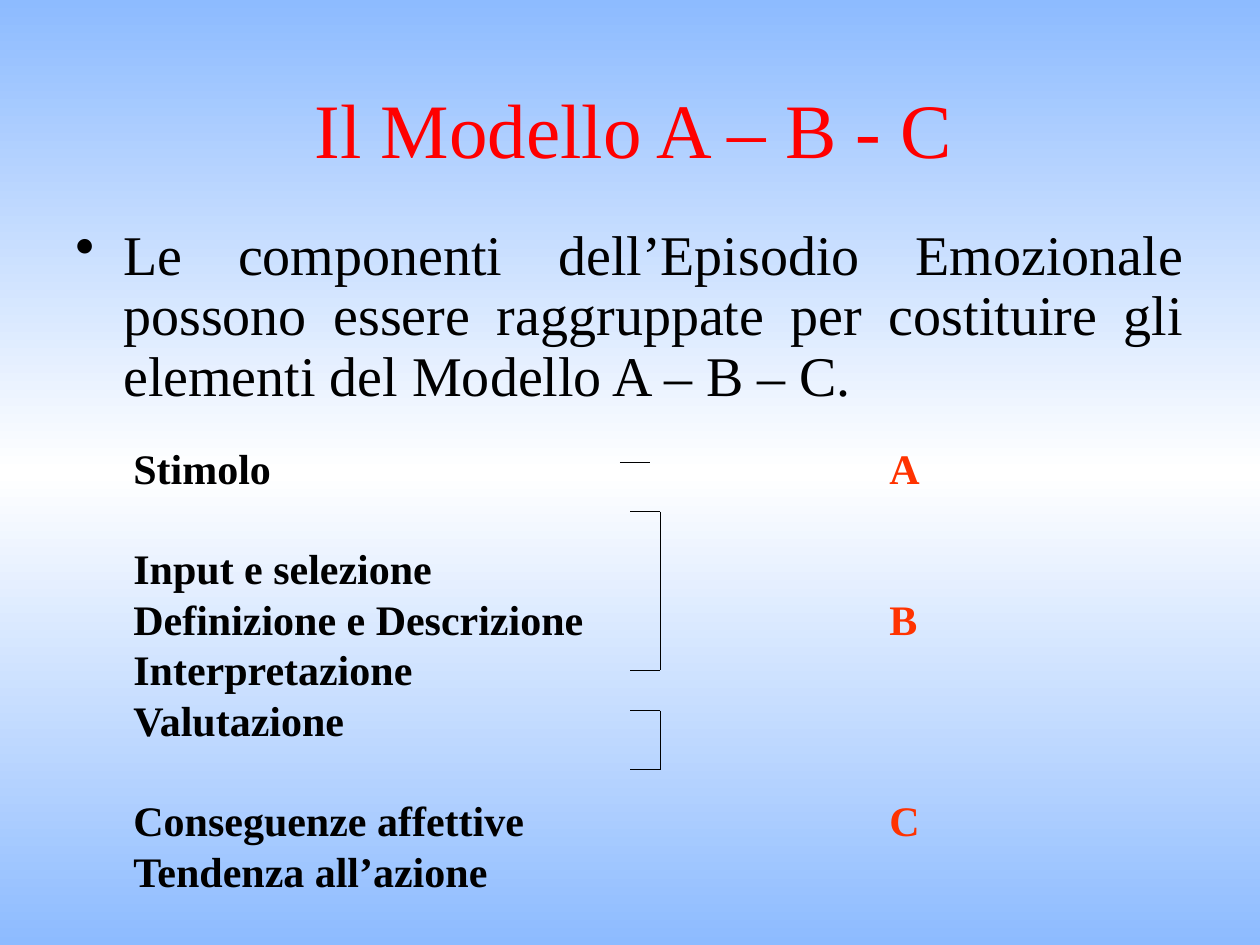
from copy import deepcopy
from lxml import etree
from pptx import Presentation
from pptx import util as u
from pptx.dml.color import RGBColor
from pptx.enum import shapes, text
from pptx.oxml.ns import qn

BLACK, RED, ORANGE = "000000", "FF0000", "FF3300"
LINE_PITCH = 28.8


def write(para, wording, size, color, bold=False):
    """Add one formatted span to a paragraph."""
    span = para.add_run()
    span.text = wording
    look = {"name": "Times New Roman", "size": u.Pt(size), "bold": bold}
    for key, value in look.items():
        setattr(span.font, key, value)
    span.font.color.rgb = RGBColor.from_string(color)


def draw_line(parent, x1, y1, x2, y2):
    line = parent.add_connector(shapes.MSO_CONNECTOR.STRAIGHT,
                                *map(u.Inches, (x1, y1, x2, y2)))
    line.line.width = u.Pt(0.75)
    line.line.color.rgb = RGBColor.from_string(BLACK)
    etree.SubElement(line._element.spPr, qn("a:effectLst"))


deck = Presentation()
deck.slide_width, deck.slide_height = u.Inches(10), u.Inches(7.5)
page = deck.slides.add_slide(deck.slide_layouts[5])

# Background: blue, white in the middle, blue again
fill = page.background.fill
fill.gradient()
fill.gradient_angle = 270
for stop, color in zip(fill.gradient_stops, ("8DBBFF", "FFFFFF")):
    stop.color.rgb = RGBColor.from_string(color)
fill.gradient_stops[1].position = 0.5
stops = next(page.element.iter(qn("a:gsLst")))
last_stop = deepcopy(stops[0])
last_stop.set("pos", "100000")
stops.append(last_stop)

# Title
title = page.shapes.title
place = {"left": 0.78, "top": 0.39, "width": 8.5, "height": 1.25}
for key, value in place.items():
    setattr(title, key, u.Inches(value))
title.text_frame.vertical_anchor = text.MSO_ANCHOR.MIDDLE
para = title.text_frame.paragraphs[0]
para.alignment = text.PP_ALIGN.CENTER
write(para, "Il Modello A – B - C", 44, RED)

# Introduction
box = page.shapes.add_textbox(*map(u.Inches, (0.5, 1.75, 9, 1.69)))
box.text_frame.word_wrap = True
para = box.text_frame.paragraphs[0]
layout = {"alignment": text.PP_ALIGN.JUSTIFY, "line_spacing": 0.9,
          "space_before": u.Pt(6.4)}
for key, value in layout.items():
    setattr(para, key, value)
write(para, "Le componenti dell’Episodio Emozionale possono essere raggruppate "
      "per costituire gli elementi del Modello A – B – C.", 32, BLACK)
props = para._p.get_or_add_pPr()
props.set("marL", str(u.Inches(0.38)))
props.set("indent", str(u.Inches(-0.38)))
etree.SubElement(props, qn("a:buChar"), char="•")

# Components: wording, letter of the model, whether a new group starts
components = [
    ("Stimolo", "A", False),
    ("Input e selezione", "", True),
    ("Definizione e Descrizione", "B", False),
    ("Interpretazione", "", False),
    ("Valutazione", "", False),
    ("Conseguenze affettive", "C", True),
    ("Tendenza all’azione", "", False),
]
box = page.shapes.add_textbox(*map(u.Inches, (0.96, 3.46, 8.21, 2.8)))
frame = box.text_frame
frame.word_wrap = True
for index, (wording, letter, new_group) in enumerate(components):
    para = frame.add_paragraph() if index else frame.paragraphs[0]
    if new_group:
        para.space_before = u.Pt(LINE_PITCH)
    write(para, wording, 24, BLACK, bold=True)
    if letter:
        write(para, "\t" + letter, 24, ORANGE, bold=True)
        tabs = etree.SubElement(para._p.get_or_add_pPr(), qn("a:tabLst"))
        etree.SubElement(tabs, qn("a:tab"), pos=str(u.Inches(6)), algn="l")

# Dash beside A, brackets beside B and C
draw_line(page.shapes, 4.92, 3.67, 5.16, 3.67)
left, right = 5, 5.24
for top, bottom in ((4.06, 5.32), (5.64, 6.11)):
    bracket = page.shapes.add_group_shape().shapes
    draw_line(bracket, right, top, right, bottom)
    for y in (top, bottom):
        draw_line(bracket, left, y, right, y)

deck.save("out.pptx")
